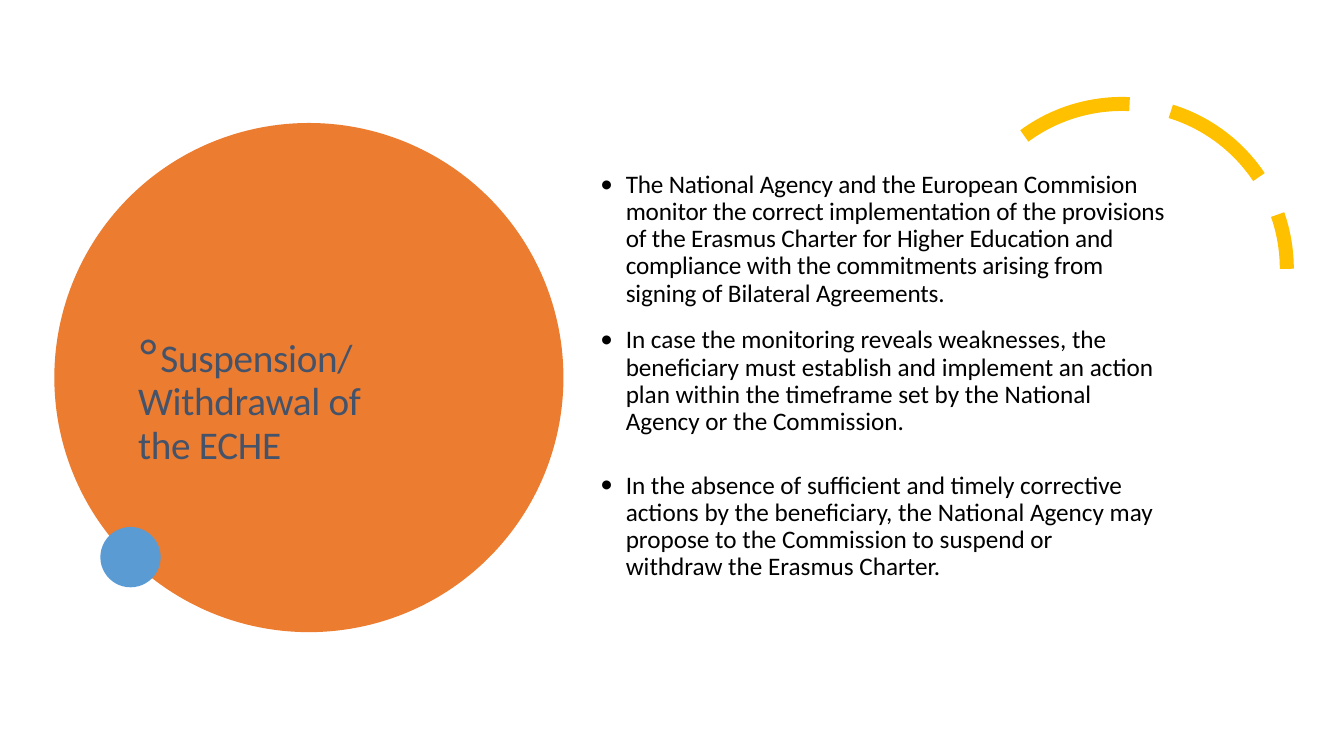
from dataclasses import dataclass

from lxml import etree
from pptx import Presentation
from pptx.dml.color import RGBColor
from pptx.enum.dml import MSO_LINE
from pptx.enum.shapes import MSO_SHAPE
from pptx.enum.text import MSO_ANCHOR, MSO_AUTO_SIZE, PP_ALIGN
from pptx.oxml.ns import qn
from pptx.shapes.autoshape import Shape
from pptx.slide import Slide
from pptx.util import Cm, Pt

OVAL = MSO_SHAPE.OVAL
ARC = MSO_SHAPE.ARC
LONG_DASH = MSO_LINE.LONG_DASH
ANCHOR_TOP = MSO_ANCHOR.TOP
NO_AUTOFIT = MSO_AUTO_SIZE.NONE
ALIGN_LEFT = PP_ALIGN.LEFT

FONT = "Calibri"
COLORS = {
    "disc": "EC7C30",
    "dot": "5B9BD4",
    "arc": "FFC000",
    "title": "44536A",
    "body": "000000",
}
ARC_START_DEGREES = 233.7
ADJUSTMENT_PER_DEGREE = 0.6


@dataclass(frozen=True)
class Disc:
    left: float
    top: float
    diameter: float
    color: str


@dataclass(frozen=True)
class TextLine:
    text: str
    color: str
    size: float
    line_spacing: float
    space_before: float = 0
    margin: float = 0
    hanging: float = 0
    bullet: str = ""
    bullet_percent: int = 100
    tracking: float = 0


@dataclass(frozen=True)
class TextArea:
    left: float
    top: float
    width: float
    height: float
    lines: tuple[TextLine, ...]


DISCS = (
    Disc(1.37, 3.1, 12.83, "disc"),
    Disc(2.53, 13.28, 1.52, "dot"),
)
DASHED_ARC = Disc(24.12, 2.62, 8.31, "arc")


def bullet_item(text: str, space_before: float = 0, tracking: float = 0) -> TextLine:
    return TextLine(text, "body", 18, 19.4, space_before, 0.66, 0.64, "•", 100, tracking)


TITLE = TextArea(3.48, 8.38, 6.7, 3.43, (
    TextLine("Suspension/", "title", 28, 33.9, 0, 0.56, 0.51, "°", 125, -0.2),
    TextLine("Withdrawal of the ECHE", "title", 28, 31.3, tracking=-0.2),
))
BODY = TextArea(15.11, 4.32, 14.39, 10.3, (
    bullet_item(
        "The National Agency and the European Commision monitor the correct "
        "implementation of the provisions of the Erasmus Charter for Higher "
        "Education and compliance with the commitments arising from signing "
        "of Bilateral Agreements.",
        tracking=-0.1,
    ),
    bullet_item(
        "In case the monitoring reveals weaknesses, the beneficiary must "
        "establish and implement an action plan within the timeframe set by "
        "the National\vAgency or the Commission.",
        space_before=14.1,
    ),
    bullet_item(
        "In the absence of sufficient and timely corrective actions by the "
        "beneficiary, the National Agency may propose to the Commission to "
        "suspend or\vwithdraw the Erasmus Charter.",
        space_before=26.3,
    ),
))


def color_of(name: str) -> RGBColor:
    return RGBColor.from_string(COLORS[name])


def add_round_shape(slide: Slide, kind: int, disc: Disc) -> Shape:
    shape = slide.shapes.add_shape(
        kind, Cm(disc.left), Cm(disc.top), Cm(disc.diameter), Cm(disc.diameter)
    )
    shape.shadow.inherit = False
    return shape


def add_disc(slide: Slide, disc: Disc) -> None:
    shape = add_round_shape(slide, OVAL, disc)
    shape.fill.solid()
    shape.fill.fore_color.rgb = color_of(disc.color)
    shape.line.fill.background()
    slide.shapes.title.element.addprevious(shape.element)


def add_dashed_arc(slide: Slide, arc: Disc) -> None:
    shape = add_round_shape(slide, ARC, arc)
    shape.adjustments[0] = ARC_START_DEGREES * ADJUSTMENT_PER_DEGREE
    shape.adjustments[1] = 0
    shape.fill.background()
    shape.line.color.rgb = color_of(arc.color)
    shape.line.width = Pt(10)
    shape.line.dash_style = LONG_DASH


def fill_text(shape: Shape, area: TextArea) -> None:
    shape.left, shape.top = Cm(area.left), Cm(area.top)
    shape.width, shape.height = Cm(area.width), Cm(area.height)
    frame = shape.text_frame
    frame.word_wrap = True
    frame.auto_size = NO_AUTOFIT
    frame.vertical_anchor = ANCHOR_TOP
    frame.margin_left = frame.margin_right = 0
    frame.margin_top = frame.margin_bottom = 0
    for index, line in enumerate(area.lines):
        paragraph = frame.add_paragraph() if index else frame.paragraphs[0]
        paragraph.text = line.text
        paragraph.alignment = ALIGN_LEFT
        paragraph.line_spacing = Pt(line.line_spacing)
        paragraph.space_before = Pt(line.space_before)
        paragraph.space_after = Pt(0)
        paragraph.font.name = FONT
        paragraph.font.size = Pt(line.size)
        paragraph.font.bold = False
        paragraph.font.color.rgb = color_of(line.color)

        properties = paragraph._p.get_or_add_pPr()
        properties.set("marL", str(Cm(line.margin)))
        properties.set("indent", str(-Cm(line.hanging)))
        defaults = properties.find(qn("a:defRPr"))
        defaults.set("spc", str(round(line.tracking * 100)))
        if line.bullet:
            bullet_color = etree.Element(qn("a:buClr"))
            etree.SubElement(bullet_color, qn("a:srgbClr"), val=COLORS[line.color])
            defaults.addprevious(bullet_color)
            for tag, attributes in (
                ("a:buSzPct", {"val": str(line.bullet_percent * 1000)}),
                ("a:buFont", {"typeface": FONT}),
                ("a:buChar", {"char": line.bullet}),
            ):
                defaults.addprevious(etree.Element(qn(tag), attributes))


def main() -> None:
    presentation = Presentation()
    presentation.slide_width = Cm(33.87)
    presentation.slide_height = Cm(19.05)
    slide = presentation.slides.add_slide(presentation.slide_layouts[1])
    for disc in DISCS:
        add_disc(slide, disc)
    add_dashed_arc(slide, DASHED_ARC)
    fill_text(slide.shapes.title, TITLE)
    fill_text(slide.placeholders[1], BODY)
    presentation.save("out.pptx")


if __name__ == "__main__":
    main()
